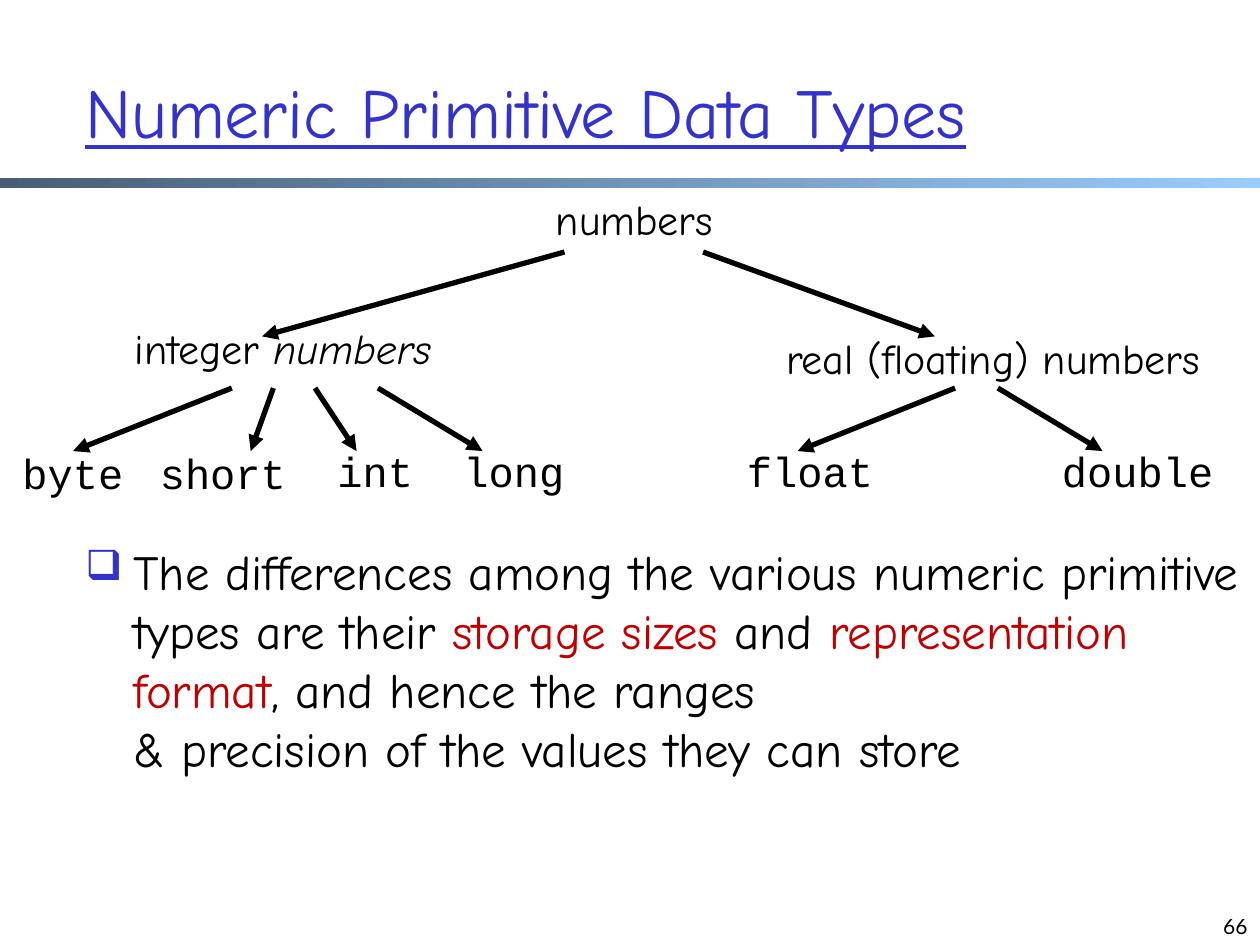
from pptx import Presentation
from pptx.dml.color import RGBColor as RGB
from pptx.enum.shapes import MSO_CONNECTOR as Link, MSO_SHAPE as Shape
from pptx.enum.text import MSO_ANCHOR as Anchor, PP_ALIGN as Align
from pptx.util import Inches, Pt
from lxml.etree import SubElement
from pptx.oxml.ns import qn

HEX = {"ink": "000000", "blue": "3333CC", "red": "C00000", "dark": "475E76", "sky": "99CCFF"}
HAND, CODE, SANS = "Comic Neue", "Courier New", "Lato"


class Deck:
    def __init__(self, slide):
        self.slide = slide

    def hue(self, name):
        return RGB.from_string(HEX[name])

    def bar(self, *box):
        bar = self.slide.shapes.add_shape(Shape.RECTANGLE, *map(Inches, box))
        bar.shadow.inherit = False
        bar.line.fill.background()
        bar.fill.gradient()
        bar.fill.gradient_angle = 0
        for stop, name in zip(bar.fill.gradient_stops, ("dark", "sky")):
            stop.color.rgb = self.hue(name)

    def text(self, box, words, size=24, face=HAND, color="ink", align=Align.LEFT, anchor=Anchor.TOP):
        frame = self.slide.shapes.add_textbox(*map(Inches, box)).text_frame
        frame.word_wrap = True
        frame.vertical_anchor = anchor
        para = frame.paragraphs[0]
        para.text = words
        para.alignment = align
        para.font.size = Pt(size)
        para.font.name = face
        para.font.color.rgb = self.hue(color)
        return para

    def run(self, para, words, color="ink", italic=None):
        run = para.add_run()
        run.text = words
        run.font.color.rgb = self.hue(color)
        run.font.italic = italic

    def bullet(self, para, mark, color, scale, indent):
        props = para._p.get_or_add_pPr()
        props.set("marL", str(Inches(indent)))
        props.set("indent", str(-Inches(indent)))
        tint = SubElement(props, qn("a:buClr"))
        SubElement(tint, qn("a:srgbClr"), val=HEX[color])
        SubElement(props, qn("a:buSzPct"), val=str(scale * 1000))
        SubElement(props, qn("a:buChar"), char=mark)
        props.append(props.find(qn("a:defRPr")))

    def arrow(self, *ends):
        line = self.slide.shapes.add_connector(Link.STRAIGHT, *map(Inches, ends))
        line.line.color.rgb = self.hue("ink")
        line.line.width = Pt(3)
        SubElement(line.line._ln, qn("a:tailEnd"), type="triangle")
        SubElement(line._element.spPr, qn("a:effectLst"))


def main():
    show = Presentation()
    show.slide_width, show.slide_height = Inches(10), Inches(7.5)
    deck = Deck(show.slides.add_slide(show.slide_layouts[6]))

    deck.bar(0, 1.41, 10, 0.08)
    deck.text((7.67, 7, 2.33, 0.5), "66", 12, SANS, align=Align.RIGHT, anchor=Anchor.BOTTOM)
    title = deck.text((0.58, 0.25, 8.5, 1.25), "Numeric Primitive Data Types", 40,
                      color="blue", anchor=Anchor.MIDDLE)
    title.font.underline = True

    deck.text((3.91, 1.49, 2.25, 0.51), "numbers", align=Align.CENTER)
    whole = deck.text((0.83, 2.51, 2.83, 0.51), "integer ", align=Align.CENTER)
    deck.run(whole, "numbers", italic=True)
    deck.text((5.92, 2.59, 3.92, 0.51), "real (floating) numbers", align=Align.CENTER)
    for start, end in ((4.48, 2.08), (5.58, 7.42)):
        deck.arrow(start, 2, end, 2.67)

    leaves = (
        ("byte", 0.08, 3.5, 1.84, 0.58),
        ("short", 1.17, 3.5, 2.17, 1.99),
        ("int", 2.58, 3.49, 2.5, 2.83),
        ("long", 3.58, 3.49, 3, 3.83),
        ("float", 5.83, 3.49, 7.58, 6.33),
        ("double", 8.33, 3.49, 7.92, 8.75),
    )
    for name, left, top, start, end in leaves:
        deck.arrow(start, 3.08, end, 3.58)
        deck.text((left, top, 1.42, 0.51), name, face=CODE)

    body = deck.text((0.58, 4.25, 9.67, 3),
                     "The differences among the various numeric primitive types are their ", 28)
    deck.run(body, "storage sizes ", "red")
    deck.run(body, "and ")
    deck.run(body, "representation format", "red")
    deck.run(body, ", and hence the ranges")
    body.add_line_break()
    deck.run(body, "& precision of the values they can store")
    deck.bullet(body, "❑", "blue", 85, 0.38)

    show.save("out.pptx")


if __name__ == "__main__":
    main()
